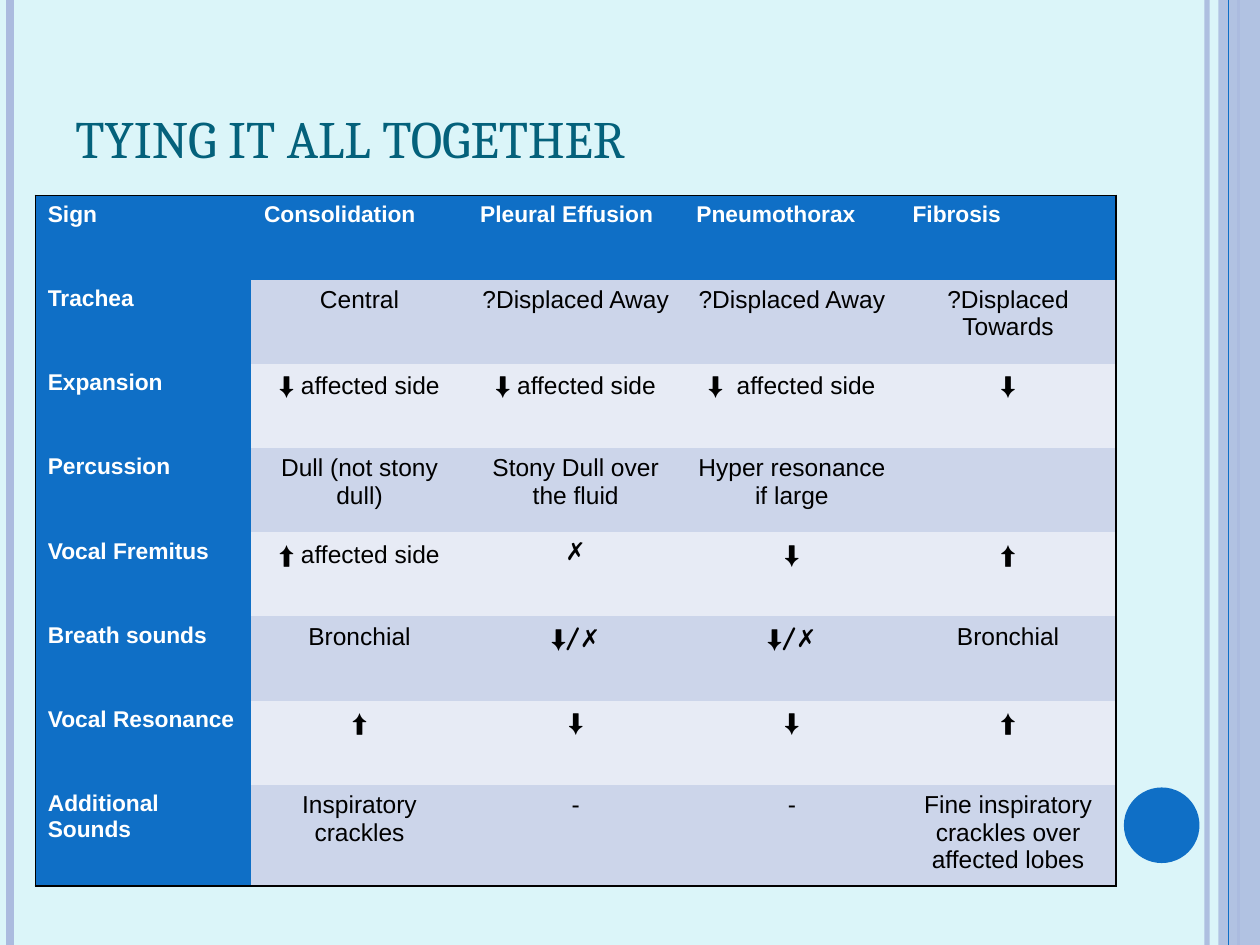
"""Build a slide with a table that compares chest examination signs."""
from itertools import groupby

from lxml.etree import SubElement
from pptx import Presentation
from pptx.dml.color import RGBColor
from pptx.enum.shapes import MSO_CONNECTOR as Connector, MSO_SHAPE as Shape
from pptx.enum.text import MSO_ANCHOR as Anchor, PP_ALIGN as Align
from pptx.oxml import parse_xml
from pptx.oxml.ns import nsdecls, qn
from pptx.util import Inches, Pt

PALE = RGBColor(0xDB, 0xF5, 0xF9)
LAVENDER = RGBColor(0xAB, 0xBB, 0xDF)
BLUE = RGBColor(0x0F, 0x6F, 0xC6)
TEAL = RGBColor(0x04, 0x61, 0x7B)
WHITE = RGBColor(0xFF, 0xFF, 0xFF)
BLACK = RGBColor(0x00, 0x00, 0x00)
BANDS = (RGBColor(0xE7, 0xEB, 0xF5), RGBColor(0xCC, 0xD5, 0xEA))

NO_GRID_STYLE = "{2D5ABB26-0587-4C30-8999-92F81FD0307C}"
SYMBOLS = "⬇⬆/"
HEADING = {"size": Pt(13), "bold": True}
BODY = {"size": Pt(14), "bold": False}
SIGNS = [
    ["Sign", "Consolidation", "Pleural Effusion", "Pneumothorax", "Fibrosis"],
    ["Trachea", "Central", "?Displaced Away", "?Displaced Away", "?Displaced Towards"],
    ["Expansion", "⬇ affected side", "⬇ affected side", "⬇  affected side", "⬇"],
    ["Percussion", "Dull (not stony dull)", "Stony Dull over the fluid",
     "Hyper resonance if large", ""],
    ["Vocal Fremitus", "⬆ affected side", "✗", "⬇", "⬆"],
    ["Breath sounds", "Bronchial", "⬇/✗", "⬇/✗", "Bronchial"],
    ["Vocal Resonance", "⬆", "⬇", "⬇", "⬆"],
    ["Additional Sounds", "Inspiratory crackles", "-", "-",
     "Fine inspiratory crackles over affected lobes"],
]


def apply_format(target, values):
    for name, value in values.items():
        setattr(target, name, value)


def set_opacity(properties, percent):
    colour = next(properties.iter(qn("a:srgbClr")))
    SubElement(colour, qn("a:alpha"), val=str(percent * 1000))


deck = Presentation()
apply_format(deck, {"slide_width": Inches(10), "slide_height": Inches(7.5)})
COLUMN = deck.slide_width / 100
ROW = deck.slide_height / 75
page = deck.slides.add_slide(deck.slide_layouts[6])
page.background.fill.solid()
page.background.fill.fore_color.rgb = PALE

panel = page.shapes.add_shape(
    Shape.RECTANGLE, int(96.7 * COLUMN), 0, int(3.3 * COLUMN), deck.slide_height)
disc = page.shapes.add_shape(
    Shape.OVAL, int(89.2 * COLUMN), int(62.5 * ROW), int(6 * COLUMN), int(6 * ROW))
for shape, colour in ((panel, LAVENDER), (disc, BLUE)):
    shape.shadow.inherit = False
    shape.fill.solid()
    shape.fill.fore_color.rgb = colour
    shape.line.fill.background()
set_opacity(panel.fill._xPr, 87)

for column, colour, weight, opacity in (
    (95.8, LAVENDER, 3, 93),
    (0.8, LAVENDER, 4.5, 100),
    (98.3, LAVENDER, 1.5, 100),
    (97.5, BLUE, 0.75, 100),
):
    x = int(column * COLUMN)
    stripe = page.shapes.add_connector(Connector.STRAIGHT, x, 0, x, deck.slide_height)
    stripe.line.color.rgb = colour
    stripe.line.width = Pt(weight)
    properties = stripe._element.spPr
    if opacity < 100:
        set_opacity(properties, opacity)
    SubElement(properties, qn("a:effectLst"))

title = page.shapes.add_textbox(
    int(5 * COLUMN), int(3 * ROW), int(81.7 * COLUMN), int(10.9 * ROW))
apply_format(title.text_frame, {"word_wrap": True, "vertical_anchor": Anchor.BOTTOM})
span = title.text_frame.paragraphs[0].add_run()
span.text = "TYING IT ALL TOGETHER"
apply_format(span.font, {"name": "Cambria", "size": Pt(30)})
span.font.color.rgb = TEAL

row_count, column_count = len(SIGNS), len(SIGNS[0])
frame = page.shapes.add_table(
    row_count, column_count, int(2.8 * COLUMN), int(15.5 * ROW),
    int(85.8 * COLUMN), int(53.5 * ROW))
table = frame.table
apply_format(table, {"first_row": False, "horz_banding": False})
table._tbl.tblPr.find(qn("a:tableStyleId")).text = NO_GRID_STYLE

for r, texts in enumerate(SIGNS):
    for c, text in enumerate(texts):
        cell = table.cell(r, c)
        heading = r == 0 or c == 0
        cell.fill.solid()
        cell.fill.fore_color.rgb = BLUE if heading else BANDS[r % 2]
        para = cell.text_frame.paragraphs[0]
        para.alignment = Align.LEFT if heading else Align.CENTER
        para.font.size = Pt(14)
        for symbolic, letters in groupby(text, lambda letter: letter in SYMBOLS):
            for part in "".join(letters).partition("/"):
                if part:
                    span = para.add_run()
                    span.text = part
                    apply_format(span.font, HEADING if heading else BODY)
                    span.font.name = "Quicksand" if symbolic else "Arial"
                    span.font.bold = heading or part == "/"
                    span.font.color.rgb = WHITE if heading else BLACK
        edges = {"lnL": c == 0, "lnR": c == column_count - 1,
                 "lnT": r == 0, "lnB": r == row_count - 1}
        outer = [edge for edge, present in edges.items() if present]
        for index, edge in enumerate(outer):
            cell._tc.get_or_add_tcPr().insert(index, parse_xml(
                f'<a:{edge} {nsdecls("a")} w="{Pt(1)}"><a:solidFill>'
                f'<a:srgbClr val="{BLACK}"/></a:solidFill></a:{edge}>'))

deck.save("out.pptx")
